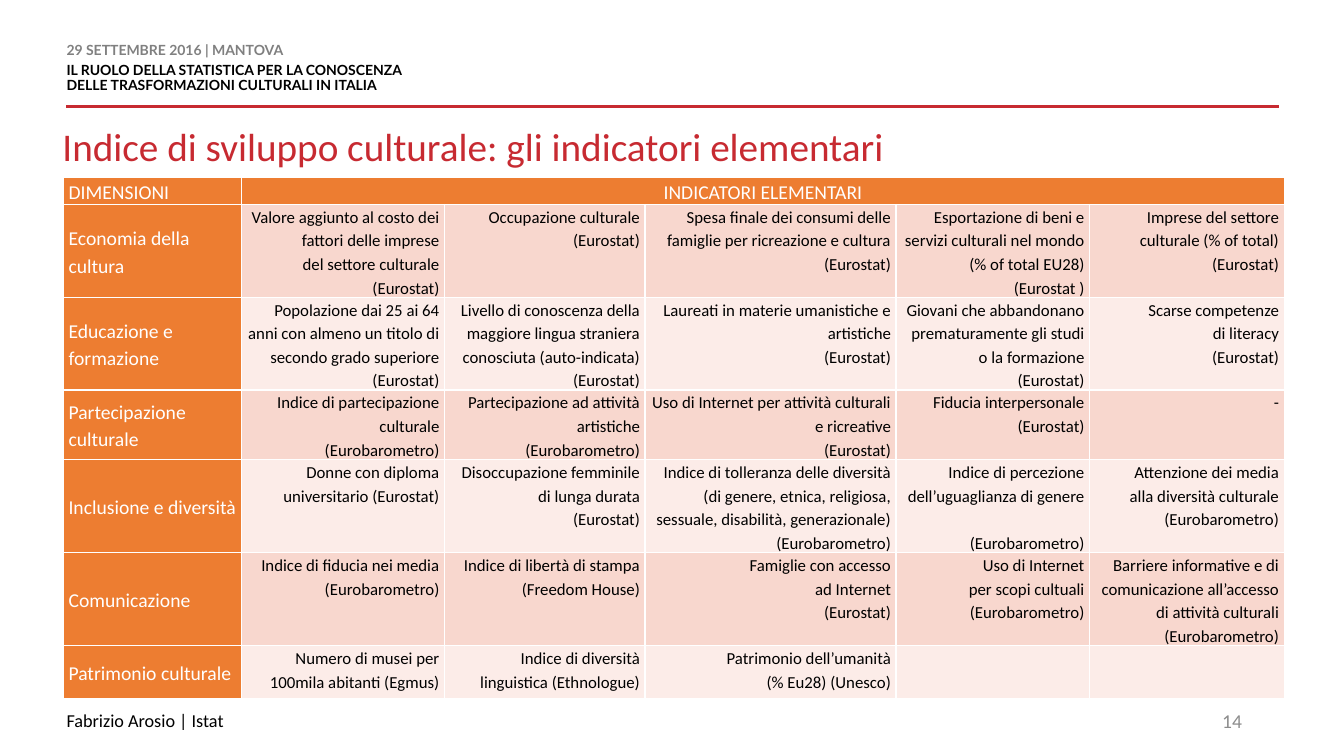
from dataclasses import dataclass

from lxml.etree import SubElement
from pptx import Presentation
from pptx.dml.color import RGBColor
from pptx.enum.shapes import MSO_CONNECTOR as Connector
from pptx.enum.text import MSO_ANCHOR as Anchor, PP_ALIGN as Align
from pptx.oxml.ns import qn
from pptx.util import Inches, Pt

GRID_COLUMNS, GRID_ROWS = 160, 90


@dataclass(frozen=True)
class Theme:
    red: str = "C72A31"
    orange: str = "ED7D31"
    bands: tuple = ("F8D7CE", "FCECE8")
    white: str = "FFFFFF"
    black: str = "000000"
    gray: str = "808080"
    pale_gray: str = "8C8C8C"
    body_font: str = "Calibri"
    header_font: str = "Lato"
    title_size: int = 28
    label_size: int = 14
    footer_size: int = 13
    cell_size: int = 12
    header_size: int = 10


class Page:
    """Draws on one slide; lengths are columns and rows of the grid."""

    def __init__(self, deck, theme):
        self.theme = theme
        self.slide = deck.slides.add_slide(deck.slide_layouts[6])
        self.column = deck.slide_width / GRID_COLUMNS
        self.row = deck.slide_height / GRID_ROWS

    def area(self, left, top, width, height):
        return (round(left * self.column), round(top * self.row),
                round(width * self.column), round(height * self.row))

    def style(self, para, size, color, font=None, bold=False, align=Align.LEFT, spacing=None):
        para.alignment = align
        if spacing:
            para.line_spacing = spacing
        para.font.name = font or self.theme.body_font
        para.font.size = Pt(size)
        para.font.bold = bold
        para.font.color.rgb = RGBColor.from_string(color)

    def text(self, place, words, size, color, anchor=Anchor.TOP, inset=0, **style):
        frame = self.slide.shapes.add_textbox(*self.area(*place)).text_frame
        frame.word_wrap = True
        frame.vertical_anchor = anchor
        frame.margin_left = frame.margin_right = Inches(inset)
        frame.margin_top = frame.margin_bottom = 0
        frame.text = words
        for para in frame.paragraphs:
            self.style(para, size, color, **style)
        return frame

    def rule(self, left, right, top, color, width):
        start, level, length, _ = self.area(left, top, right - left, 0)
        line = self.slide.shapes.add_connector(
            Connector.STRAIGHT, start, level, start + length, level)
        line.line.color.rgb = RGBColor.from_string(color)
        line.line.width = Pt(width)
        SubElement(line._element.spPr, qn("a:effectLst"))

    def cell(self, cell, words, fill, size, color, align, anchor):
        cell.margin_left = cell.margin_right = Inches(0.05)
        cell.margin_top = cell.margin_bottom = 0
        cell.vertical_anchor = anchor
        # White borders on all four sides
        properties = cell._tc.get_or_add_tcPr()
        for side in ("lnL", "lnR", "lnT", "lnB"):
            border = SubElement(properties, qn(f"a:{side}"), w=str(Pt(1)))
            solid = SubElement(border, qn("a:solidFill"))
            SubElement(solid, qn("a:srgbClr"), val=self.theme.white)
        cell.fill.solid()
        cell.fill.fore_color.rgb = RGBColor.from_string(fill)
        cell.text = words
        for para in cell.text_frame.paragraphs:
            self.style(para, size, color, align=align, spacing=1.15)

    def table(self, left, top, widths, heights, headings, rows):
        theme = self.theme
        place = self.area(left, top, sum(widths), sum(heights))
        table = self.slide.shapes.add_table(len(heights), len(widths), *place).table
        table.first_col = True
        table.horz_banding = False
        for column, width in zip(table.columns, widths):
            column.width = round(width * self.column)
        for row, height in zip(table.rows, heights):
            row.height = round(height * self.row)
        # Heading row: the second heading spans every indicator column
        blanks = [""] * (len(widths) - len(headings))
        for index, words in enumerate([*headings, *blanks]):
            self.cell(table.cell(0, index), words, theme.orange, theme.label_size, theme.white,
                      Align.CENTER if index else Align.LEFT, Anchor.TOP)
        table.cell(0, 1).merge(table.cell(0, len(widths) - 1))
        # One dimension per row, with its indicators
        for number, (dimension, *indicators) in enumerate(rows, 1):
            self.cell(table.cell(number, 0), dimension, theme.orange, theme.label_size,
                      theme.white, Align.LEFT, Anchor.MIDDLE)
            for index, words in enumerate(indicators, 1):
                self.cell(table.cell(number, index), words, theme.bands[(number - 1) % 2],
                          theme.cell_size, theme.black, Align.RIGHT, Anchor.TOP)
        return table


# In cells, \n starts a paragraph and \v breaks a line
DIMENSIONS = [
    ["Economia della cultura",
     "Valore aggiunto al costo dei fattori delle imprese\vdel settore culturale\n(Eurostat)",
     "Occupazione culturale\v(Eurostat)",
     "Spesa finale dei consumi delle famiglie per ricreazione e cultura\n(Eurostat)",
     "Esportazione di beni e servizi culturali nel mondo\v(% of total EU28)\v(Eurostat )",
     "Imprese del settore culturale (% of total)\v(Eurostat)"],
    ["Educazione e formazione",
     "Popolazione dai 25 ai 64 anni con almeno un titolo di secondo grado superiore\n(Eurostat)",
     "Livello di conoscenza della maggiore lingua straniera conosciuta (auto-indicata)\n(Eurostat)",
     "Laureati in materie umanistiche e artistiche\n(Eurostat)",
     "Giovani che abbandonano prematuramente gli studi o la formazione\n(Eurostat)",
     "Scarse competenze\vdi literacy\n(Eurostat)"],
    ["Partecipazione culturale",
     "Indice di partecipazione culturale\n(Eurobarometro)",
     "Partecipazione ad attività artistiche\n(Eurobarometro)",
     "Uso di Internet per attività culturali e ricreative\v(Eurostat)",
     "Fiducia interpersonale\v(Eurostat)",
     "-"],
    ["Inclusione e diversità",
     "Donne con diploma universitario (Eurostat)",
     "Disoccupazione femminile di lunga durata\v(Eurostat)",
     "Indice di tolleranza delle diversità (di genere, etnica, religiosa, sessuale, "
     "disabilità, generazionale)\v(Eurobarometro)",
     "Indice di percezione\vdell’uguaglianza di genere\n(Eurobarometro)",
     "Attenzione dei media\valla diversità culturale\v(Eurobarometro)"],
    ["Comunicazione",
     "Indice di fiducia nei media\n(Eurobarometro)",
     "Indice di libertà di stampa (Freedom House)",
     "Famiglie con accesso\vad Internet\v(Eurostat)",
     "Uso di Internet\vper scopi cultuali\n(Eurobarometro)",
     "Barriere informative e di comunicazione all’accesso di attività culturali (Eurobarometro)"],
    ["Patrimonio culturale",
     "Numero di musei per 100mila abitanti (Egmus)",
     "Indice di diversità linguistica (Ethnologue)",
     "Patrimonio dell’umanità\v(% Eu28) (Unesco)",
     "",
     ""],
]


def main():
    deck = Presentation()
    deck.slide_width, deck.slide_height = Inches(13.33), Inches(7.5)
    theme = Theme()
    page = Page(deck, theme)
    margin = 7.92

    # Conference header and rule
    page.rule(margin, 152.28, 12.72, theme.red, 2)
    header = page.text(
        (margin, 5.16, 83.4, 7.92),
        "29 SETTEMBRE 2016 | MANTOVA\nIL RUOLO DELLA STATISTICA PER LA CONOSCENZA\n"
        "DELLE TRASFORMAZIONI CULTURALI IN ITALIA",
        theme.header_size, theme.black, font=theme.header_font, bold=True, spacing=Pt(11))
    date = header.paragraphs[0]
    date.space_after = Pt(3)
    date.font.color.rgb = RGBColor.from_string(theme.gray)

    # Title
    page.text((7.44, 15.24, 145.32, 5.88),
              "Indice di sviluppo culturale: gli indicatori elementari",
              theme.title_size, theme.red, spacing=0.9)

    # Table of indicators
    table = page.table(7.56, 21.12,
                       [21.24, 24.12, 23.88, 29.88, 23.04, 23.16],
                       [3, 11.04, 11.04, 6.6, 8.76, 8.76, 6.36],
                       ["DIMENSIONI", "INDICATORI ELEMENTARI"], DIMENSIONS)
    perception_source = table.cell(4, 4).text_frame.paragraphs[-1]
    perception_source.space_before = Pt(17)

    # Footer
    page.text((margin, 83.4, 119.76, 4.8), "Fabrizio Arosio | Istat",
              theme.footer_size, theme.black, anchor=Anchor.MIDDLE)
    page.text((113.04, 83.4, 36, 4.8), "14", theme.label_size, theme.pale_gray,
              anchor=Anchor.MIDDLE, inset=0.1, align=Align.RIGHT)

    deck.save("out.pptx")


if __name__ == "__main__":
    main()
